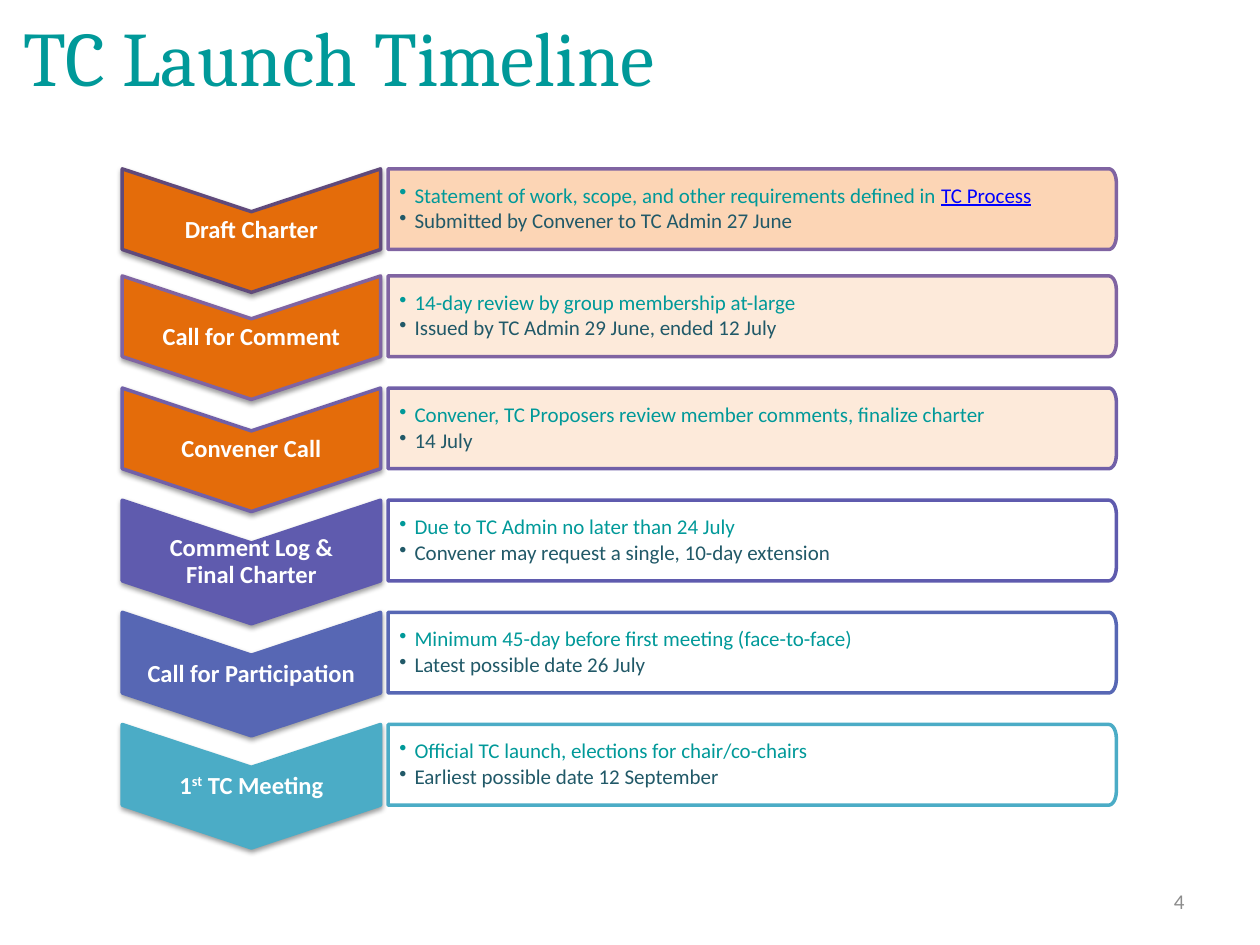
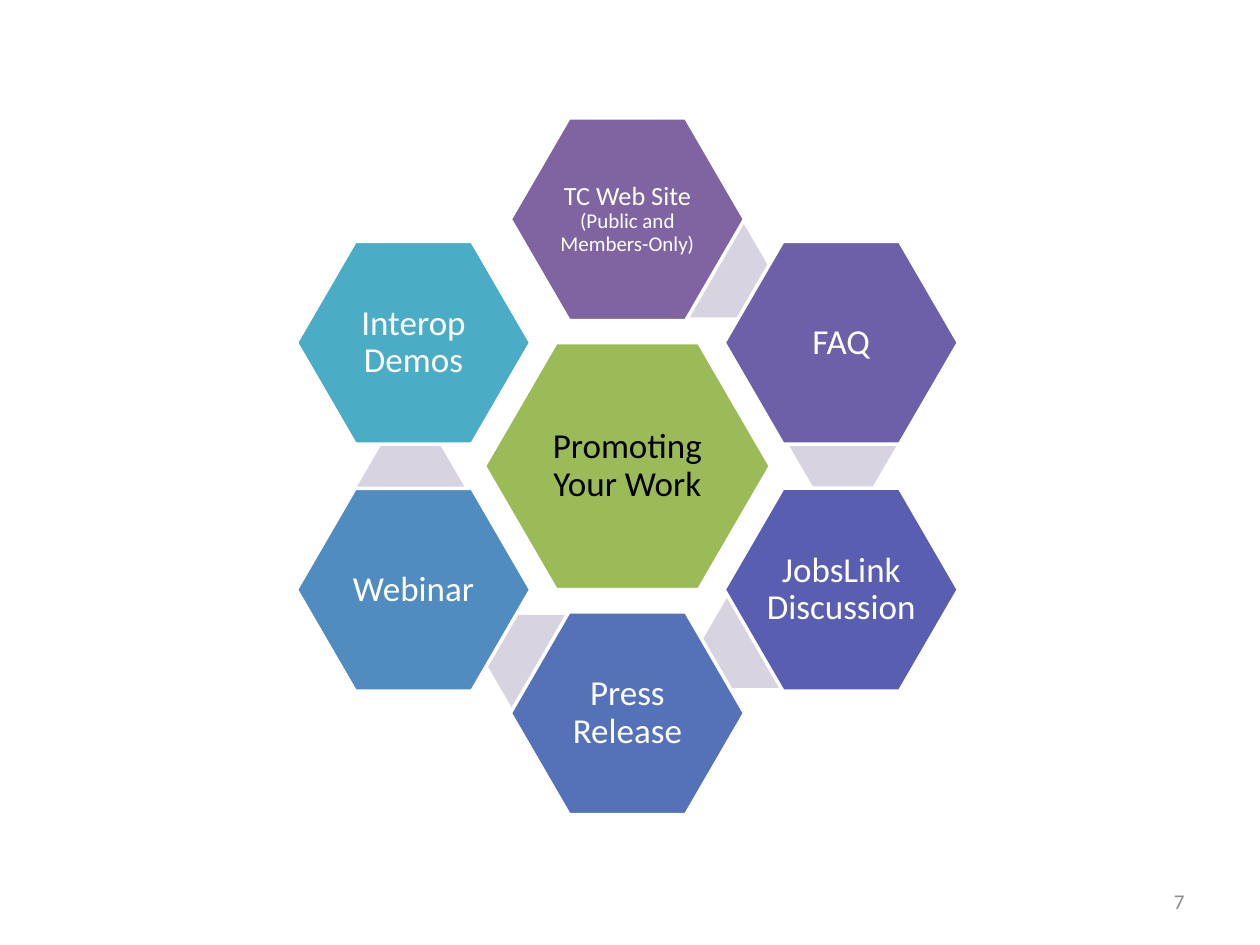
from math import cos, pi, radians, sin
from typing import NamedTuple

from lxml.etree import SubElement
from pptx import Presentation
from pptx.dml.color import RGBColor
from pptx.enum.shapes import MSO_SHAPE
from pptx.enum.text import MSO_ANCHOR, PP_ALIGN
from pptx.oxml.ns import qn
from pptx.shapes.autoshape import Shape
from pptx.slide import Slide
from pptx.text.text import TextFrame, _Paragraph
from pptx.util import Inches, Pt

COLOURS = {
    "white": "FFFFFF", "black": "000000", "grey": "8C8C8C",
    "teal": "009999", "dark teal": "215968", "link": "0000FF",
    "orange": "E46C0A", "peach": "FCD5B5", "light peach": "FDEADA",
    "dark purple": "604A7B", "purple": "8064A2", "violet": "7160A8",
    "indigo": "5F5BAE", "blue": "5767B4", "aqua": "4BACC6",
    "green": "9BBB59", "lilac": "D8D3E0", "hex violet": "6E5FA9",
    "hex indigo": "5A5EB1", "hex blue": "5572B8", "sky": "508CBF",
}
BODY_FONT, TITLE_FONT = "Calibri", "Cambria"

# Timeline geometry in inches
CHEVRON_LEFT, CHEVRON_WIDTH, CHEVRON_POINT = 0.97, 2.05, 0.34
DETAIL_LEFT, DETAIL_WIDTH = 3.08, 5.78
ROW_HEIGHT, ROW_PITCH = 0.64, 0.89
FIRST_ROW_TOP, SECOND_ROW_TOP = 1.34, 2.19
CORNER_WIDTH, CORNER_HEIGHT = 0.06, 0.11

# Hexagon ring geometry in inches
RING_X, RING_Y, RING_RADIUS = 4.98, 3.7, 1.96
HUB_SIZE, NODE_SIZE, LINK_SIZE = (2.27, 1.96), (1.86, 1.61), (0.86, 0.74)

Point = tuple[float, float]


class Span(NamedTuple):
    text: str
    size: float
    colour: str = "white"
    bold: bool = False
    underline: bool = False
    superscript: bool = False
    font: str = BODY_FONT


class Step(NamedTuple):
    label: list[Span]
    details: list[list[Span]]
    fill: str
    line: str
    detail_fill: str
    detail_line: str


class Node(NamedTuple):
    spans: list[Span]
    fill: str
    link_centre: Point | None


def heading(text: str) -> Span:
    return Span(text, 14, bold=True)


def details(first: str, second: str) -> list[list[Span]]:
    return [[Span(first, 12, "teal")], [Span(second, 12, "dark teal")]]


STEPS = [
    Step([heading("Draft Charter")],
         [[Span("Statement of work, scope, and other requirements defined in ", 12, "teal"),
           Span("TC Process", 12, "link", underline=True)],
          [Span("Submitted by Convener to TC Admin 27 June", 12, "dark teal")]],
         "orange", "dark purple", "peach", "purple"),
    Step([heading("Call for Comment")],
         details("14-day review by group membership at-large",
                 "Issued by TC Admin 29 June, ended 12 July"),
         "orange", "purple", "light peach", "purple"),
    Step([heading("Convener Call")],
         details("Convener, TC Proposers review member comments, finalize charter",
                 "14 July"),
         "orange", "violet", "light peach", "violet"),
    Step([heading("Comment Log &\nFinal Charter")],
         details("Due to TC Admin no later than 24 July",
                 "Convener may request a single, 10-day extension"),
         "indigo", "indigo", "white", "indigo"),
    Step([heading("Call for Participation")],
         details("Minimum 45-day before first meeting (face-to-face)",
                 "Latest possible date 26 July"),
         "blue", "blue", "white", "blue"),
    Step([heading("1"), Span("st", 14, bold=True, superscript=True), heading(" TC Meeting")],
         details("Official TC launch, elections for chair/co-chairs",
                 "Earliest possible date 12 September"),
         "aqua", "aqua", "white", "aqua"),
]

# Clockwise from the top; each link leads on to the next node
NODES = [
    Node([Span("TC Web Site ", 15), Span("(Public and Members-Only)", 12)],
         "purple", (5.69, 2.15)),
    Node([Span("FAQ", 20)], "hex violet", (6.69, 3.53)),
    Node([Span("JobsLink Discussion", 20)], "hex indigo", (6.0, 5.09)),
    Node([Span("Press Release", 20)], "hex blue", (4.28, 5.25)),
    Node([Span("Webinar", 20)], "sky", (3.26, 3.87)),
    Node([Span("Interop Demos", 20)], "aqua", None),
]


def rgb(name: str) -> RGBColor:
    return RGBColor.from_string(COLOURS[name])


def write(paragraph: _Paragraph, spans: list[Span], align: PP_ALIGN = PP_ALIGN.LEFT,
          line_spacing: float = 1.0) -> None:
    paragraph.alignment = align
    paragraph.line_spacing = line_spacing
    for span in spans:
        for index, line in enumerate(span.text.split("\n")):
            if index:
                paragraph.add_line_break()
            run = paragraph.add_run()
            run.text = line
            font = run.font
            font.name, font.size = span.font, Pt(span.size)
            font.bold, font.underline = span.bold, span.underline
            font.color.rgb = rgb(span.colour)
            if span.superscript:
                run._r.get_or_add_rPr().set("baseline", "30000")


def prepare_frame(frame: TextFrame, left: float, top: float,
                  right: float, bottom: float) -> None:
    """Wrap and centre the text vertically inside the given margins."""
    frame.word_wrap = True
    frame.vertical_anchor = MSO_ANCHOR.MIDDLE
    frame.margin_left, frame.margin_top = Inches(left), Inches(top)
    frame.margin_right, frame.margin_bottom = Inches(right), Inches(bottom)


def paint(shape: Shape, fill: str, line: str | None) -> None:
    shape.shadow.inherit = False
    shape.fill.solid()
    shape.fill.fore_color.rgb = rgb(fill)
    if line is None:
        shape.line.fill.background()
    else:
        shape.line.color.rgb = rgb(line)
        shape.line.width = Pt(2)


def add_text(slide: Slide, left: float, top: float, width: float, height: float,
             span: Span, align: PP_ALIGN = PP_ALIGN.LEFT) -> None:
    box = slide.shapes.add_textbox(Inches(left), Inches(top), Inches(width), Inches(height))
    prepare_frame(box.text_frame, 0.1, 0.05, 0.1, 0.05)
    write(box.text_frame.paragraphs[0], [span], align)


def add_slide_number(slide: Slide, number: int) -> None:
    add_text(slide, 7.17, 6.95, 2.33, 0.4, Span(str(number), 12, "grey"), PP_ALIGN.RIGHT)


def add_outline(slide: Slide, points: list[Point]) -> Shape:
    corners = [(Inches(x), Inches(y)) for x, y in points]
    builder = slide.shapes.build_freeform(*corners[0])
    builder.add_line_segments(corners[1:], close=True)
    return builder.convert_to_shape()


def add_soft_shadow(shape: Shape) -> None:
    effects = shape._element.spPr.find(qn("a:effectLst"))
    shadow = SubElement(effects, qn("a:outerShdw"), blurRad=str(Pt(3.1)),
                        dist=str(Pt(1.6)), dir="5400000", rotWithShape="0")
    colour = SubElement(shadow, qn("a:srgbClr"), val=COLOURS["black"])
    SubElement(colour, qn("a:alpha"), val="38000")


def add_bullet(paragraph: _Paragraph) -> None:
    properties = paragraph._p.get_or_add_pPr()
    properties.set("marL", str(Inches(0.12)))
    properties.set("indent", str(Inches(-0.12)))
    SubElement(properties, qn("a:buChar"), char="•")


def add_chevron(slide: Slide, step: Step, top: float) -> None:
    left, right = CHEVRON_LEFT, CHEVRON_LEFT + CHEVRON_WIDTH
    middle, bottom = (left + right) / 2, top + ROW_HEIGHT
    chevron = add_outline(slide, [
        (right, top), (right, bottom), (middle, bottom + CHEVRON_POINT),
        (left, bottom), (left, top), (middle, top + CHEVRON_POINT)])
    paint(chevron, step.fill, step.line)
    add_soft_shadow(chevron)
    prepare_frame(chevron.text_frame, 0, 0.35, 0, 0.35)
    write(chevron.text_frame.paragraphs[0], step.label, PP_ALIGN.CENTER, 0.9)


def add_detail_box(slide: Slide, step: Step, top: float) -> None:
    """Draw a box with rounded right corners and its bulleted lines."""
    right, bottom = DETAIL_LEFT + DETAIL_WIDTH, top + ROW_HEIGHT
    turns = [pi / 2 * index / 8 for index in range(9)]
    arc = [(right - CORNER_WIDTH * (1 - sin(turn)), CORNER_HEIGHT * (1 - cos(turn)))
           for turn in turns]
    box = add_outline(slide, [
        (DETAIL_LEFT, top), *[(x, top + drop) for x, drop in arc],
        *[(x, bottom - drop) for x, drop in reversed(arc)], (DETAIL_LEFT, bottom)])
    paint(box, step.detail_fill, step.detail_line)
    frame = box.text_frame
    prepare_frame(frame, 0.09, 0.04, 0.04, 0.04)
    for index, spans in enumerate(step.details):
        paragraph = frame.add_paragraph() if index else frame.paragraphs[0]
        write(paragraph, spans, line_spacing=0.9)
        paragraph.space_after = Pt(1.8)
        add_bullet(paragraph)


def add_hexagon(slide: Slide, centre: Point, size: Point, fill: str,
                line: str | None = None, spans: list[Span] | None = None) -> None:
    (x, y), (width, height) = centre, size
    hexagon = slide.shapes.add_shape(
        MSO_SHAPE.HEXAGON, Inches(x - width / 2), Inches(y - height / 2),
        Inches(width), Inches(height))
    hexagon.adjustments[0] = 0.29
    paint(hexagon, fill, line)
    if spans:
        prepare_frame(hexagon.text_frame, 0.02, 0.02, 0.02, 0.02)
        write(hexagon.text_frame.paragraphs[0], spans, PP_ALIGN.CENTER, 0.9)


def build_timeline(slide: Slide) -> None:
    add_text(slide, 0.09, -0.18, 9, 1.25,
             Span("TC Launch Timeline", 44, "teal", font=TITLE_FONT))
    for index, step in enumerate(STEPS):
        top = SECOND_ROW_TOP + ROW_PITCH * (index - 1) if index else FIRST_ROW_TOP
        add_chevron(slide, step, top)
        add_detail_box(slide, step, top)
    add_slide_number(slide, 4)


def build_promotion_ring(slide: Slide) -> None:
    add_hexagon(slide, (RING_X, RING_Y), HUB_SIZE, "green", "white",
                [Span("Promoting Your Work", 20, "black")])
    for index, node in enumerate(NODES):
        if node.link_centre:
            add_hexagon(slide, node.link_centre, LINK_SIZE, "lilac")
        angle = radians(360 / len(NODES) * index)
        centre = (RING_X + RING_RADIUS * sin(angle), RING_Y - RING_RADIUS * cos(angle))
        add_hexagon(slide, centre, NODE_SIZE, node.fill, "white", node.spans)
    add_slide_number(slide, 7)


def main() -> None:
    presentation = Presentation()
    presentation.slide_width, presentation.slide_height = Inches(10), Inches(7.5)
    blank_layout = presentation.slide_layouts[6]
    for build in (build_timeline, build_promotion_ring):
        build(presentation.slides.add_slide(blank_layout))
    presentation.save("out.pptx")


if __name__ == "__main__":
    main()
